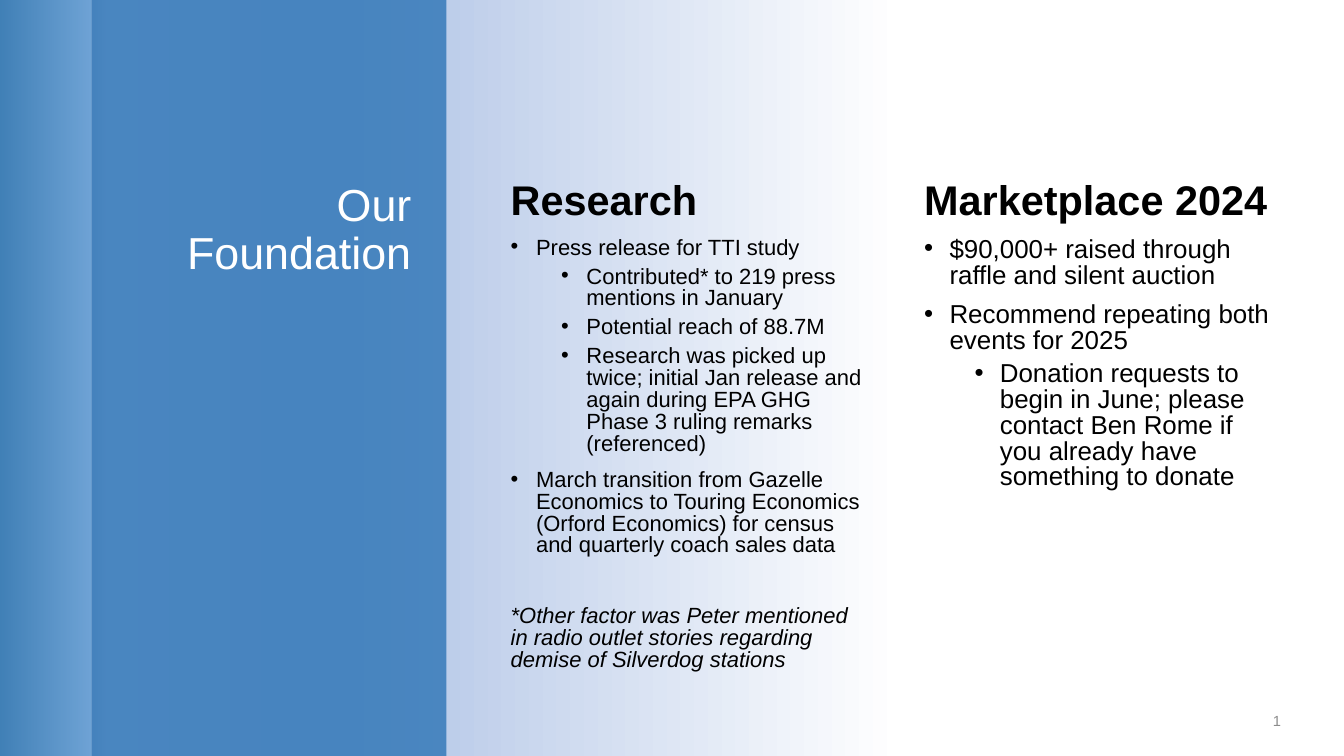
from lxml import etree
from pptx import Presentation
from pptx import util as u
from pptx.dml.color import RGBColor
from pptx.enum import shapes, text
from pptx.oxml.ns import qn

SLIDE_SIZE = (33.87, 19.05)
BACKGROUND_STOPS = [(33, "FFFFFF"), (76, "ABC0E4"), (92, "B9CBE9"), (100, "03416F"), (100, "005890")]
BANDS = [(2.31, "5B9BD5", 70), (8.94, "2E75B6", 80)]
TOP = 4.47
COLUMN_WIDTH = 9.5
COLUMNS = [
    (12.62, 13.18, 15.7, [
        ("heading", "Research"),
        ("bullet", "Press release for TTI study"),
        ("detail", "Contributed* to 219 press mentions in January"),
        ("detail", "Potential reach of 88.7M"),
        ("detail", "Research was picked up twice; initial Jan release and again during "
                   "EPA GHG Phase 3 ruling remarks (referenced)"),
        ("bullet", "March transition from Gazelle Economics to Touring Economics "
                   "(Orford Economics) for census and quarterly coach sales data"),
        ("footnote", "*Other factor was Peter mentioned in radio outlet stories regarding "
                     "demise of Silverdog stations"),
    ]),
    (23.04, 12.5, 18.5, [
        ("heading", "Marketplace 2024"),
        ("bullet", "$90,000+ raised through raffle and silent auction"),
        ("bullet", "Recommend repeating both events for 2025"),
        ("detail", "Donation requests to begin in June; please contact Ben Rome if you "
                   "already have something to donate"),
    ]),
]
STYLES = {
    "heading": {"level": 0, "before": 0, "margin": 0, "font": {"size": u.Pt(29.6), "bold": True}},
    "bullet": {"level": 0, "before": 10, "margin": 0.64, "font": {}},
    "detail": {"level": 1, "before": 5, "margin": 1.91, "font": {}},
    "footnote": {"level": 0, "before": 35, "margin": 0, "font": {"italic": True}},
}
HANGING = 0.64


def paint(color_format, value):
    color_format.rgb = RGBColor.from_string(value)


def set_values(target, values):
    for name, value in values.items():
        setattr(target, name, value)


def add_background(slide):
    fill = slide.background.fill
    fill.gradient()
    fill.gradient_angle = 180
    stops = next(slide.element.iter(qn("a:gsLst")))
    for stop in list(stops):
        stops.remove(stop)
    for position, color in BACKGROUND_STOPS:
        stop = etree.SubElement(stops, qn("a:gs"), pos=str(position * 1000))
        etree.SubElement(stop, qn("a:srgbClr"), val=color)


def add_bands(slide):
    left = 0
    for width, color, opacity in BANDS:
        band = slide.shapes.add_shape(shapes.MSO_SHAPE.RECTANGLE, u.Cm(left), 0,
                                      u.Cm(width), u.Cm(SLIDE_SIZE[1]))
        band.shadow.inherit = False
        band.line.fill.background()
        band.fill.solid()
        paint(band.fill.fore_color, color)
        color_element = next(band.fill._xPr.iter(qn("a:srgbClr")))
        etree.SubElement(color_element, qn("a:alpha"), val=str(opacity * 1000))
        left += width


def add_frame(slide, *box):
    frame = slide.shapes.add_textbox(*map(u.Cm, box)).text_frame
    frame.word_wrap = True
    return frame


def write(paragraph, words, color, font, layout):
    paragraph.text = words
    set_values(paragraph, layout)
    set_values(paragraph.font, {"name": "Arial", **font})
    paint(paragraph.font.color, color)


def add_bullet(paragraph, margin):
    properties = paragraph._p.get_or_add_pPr()
    properties.set("marL", str(u.Cm(margin)))
    properties.set("indent", str(-u.Cm(HANGING)))
    etree.SubElement(properties, qn("a:buFont"), typeface="Arial")
    etree.SubElement(properties, qn("a:buChar"), char="•")


def add_column(slide, left, height, size, entries):
    frame = add_frame(slide, left, TOP, COLUMN_WIDTH, height)
    for index, (kind, words) in enumerate(entries):
        paragraph = frame.add_paragraph() if index else frame.paragraphs[0]
        style = STYLES[kind]
        if style["margin"]:
            add_bullet(paragraph, style["margin"])
        write(paragraph, words, "000000", {"size": u.Pt(size), **style["font"]},
              {"level": style["level"], "line_spacing": 0.83, "space_before": u.Pt(style["before"])})


def main():
    presentation = Presentation()
    presentation.slide_width, presentation.slide_height = map(u.Cm, SLIDE_SIZE)
    slide = presentation.slides.add_slide(presentation.slide_layouts[6])
    add_background(slide)
    add_bands(slide)

    title = add_frame(slide, 2.77, TOP, 7.85, 12.5)
    write(title.paragraphs[0], "Our Foundation", "FFFFFF", {"size": u.Pt(32)},
          {"alignment": text.PP_ALIGN.RIGHT, "line_spacing": 0.9})

    for column in COLUMNS:
        add_column(slide, *column)

    number = add_frame(slide, 28.75, 17.65, 3.78, 1.02)
    number.vertical_anchor = text.MSO_ANCHOR.MIDDLE
    write(number.paragraphs[0], "1", "8C8C8C", {"size": u.Pt(10.5)},
          {"alignment": text.PP_ALIGN.RIGHT})
    presentation.save("out.pptx")


if __name__ == "__main__":
    main()
